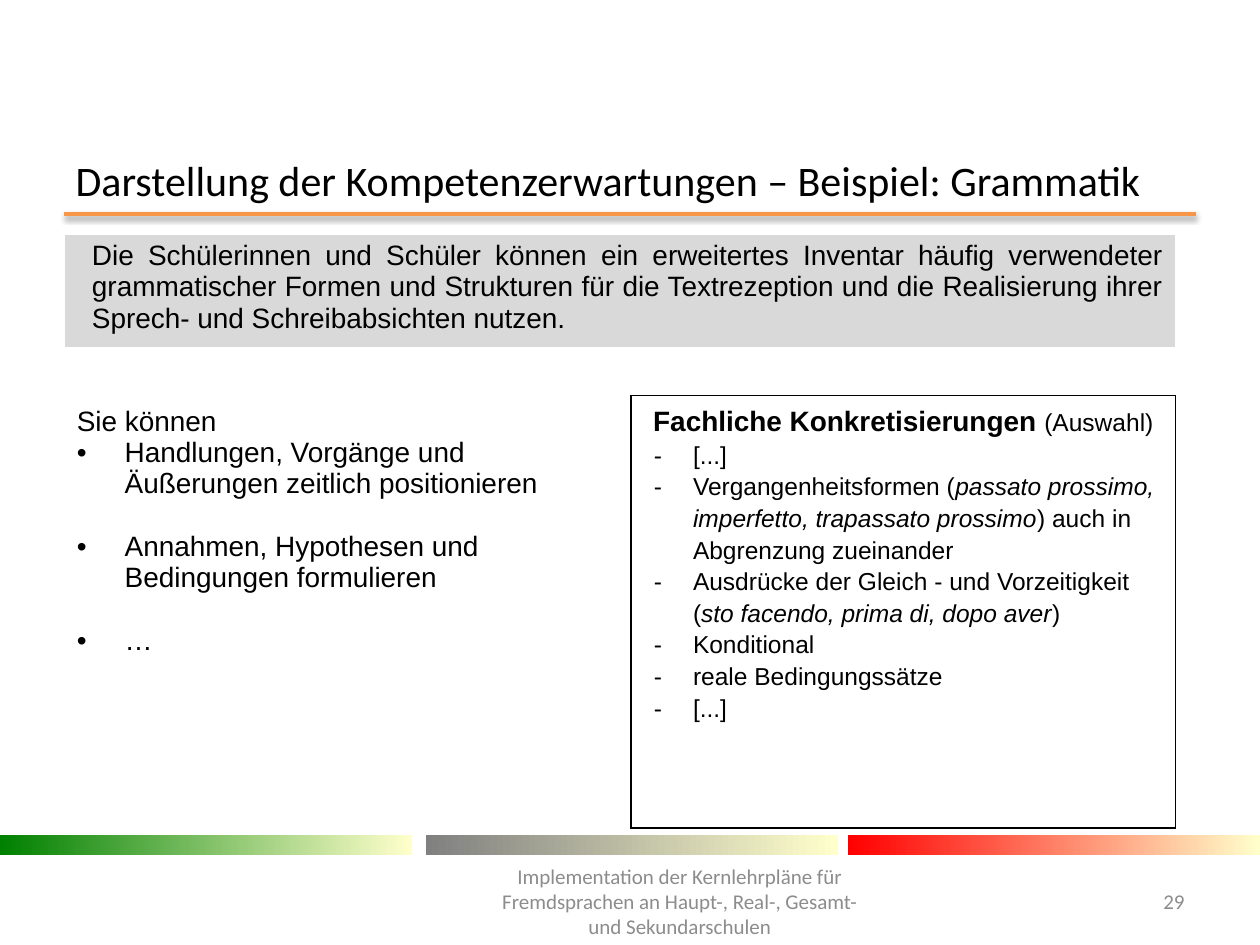
from lxml import etree
from pptx import Presentation
from pptx.dml.color import RGBColor
from pptx.enum.shapes import MSO_CONNECTOR, MSO_SHAPE
from pptx.enum.text import MSO_ANCHOR, PP_ALIGN
from pptx.oxml import parse_xml
from pptx.oxml.ns import nsdecls, qn
from pptx.util import Inches, Pt

LEFT, CENTER, RIGHT, JUSTIFY = PP_ALIGN.LEFT, PP_ALIGN.CENTER, PP_ALIGN.RIGHT, PP_ALIGN.JUSTIFY
MIDDLE = MSO_ANCHOR.MIDDLE
RECTANGLE = MSO_SHAPE.RECTANGLE
STRAIGHT = MSO_CONNECTOR.STRAIGHT

BLACK = RGBColor(0x00, 0x00, 0x00)
WHITE = RGBColor(0xFF, 0xFF, 0xFF)
SILVER = RGBColor(0xD9, 0xD9, 0xD9)
MUTED = RGBColor(0x8C, 0x8C, 0x8C)
ORANGE = RGBColor(0xF7, 0x96, 0x46)
CREAM = RGBColor(0xFF, 0xFF, 0xCC)
GREEN = RGBColor(0x00, 0x80, 0x00)
GRAY = RGBColor(0x80, 0x80, 0x80)
RED = RGBColor(0xFF, 0x00, 0x00)

deck = Presentation()
deck.slide_width, deck.slide_height = Inches(10), Inches(7.5)
page = deck.slides.add_slide(deck.slide_layouts[5])
COLUMN = deck.slide_width / 100
ROW = deck.slide_height / 75


def grid(left, top, width, height):
    return [round(left * COLUMN), round(top * ROW), round(width * COLUMN), round(height * ROW)]


def add_spans(para, spans, size, font="Arial", color=BLACK):
    for text, bold, italic in spans:
        span = para.add_run()
        span.text = text
        span.font.name, span.font.size = font, Pt(size)
        span.font.bold, span.font.italic = bold, italic
        span.font.color.rgb = color


rule = page.shapes.add_connector(STRAIGHT, *grid(5.1, 17, 94.9, 17))
rule.line.color.rgb = ORANGE
rule.line.width = Pt(2)
rule.element.spPr.append(parse_xml(
    f'<a:effectLst {nsdecls("a")}><a:outerShdw blurRad="{Pt(3.1)}" dist="{Pt(1.6)}" dir="5400000" '
    'rotWithShape="0"><a:srgbClr val="000000"><a:alpha val="38000"/></a:srgbClr>'
    '</a:outerShdw></a:effectLst>'))

for left, color in ((0, GREEN), (33.8, GRAY), (67.3, RED)):
    bar = page.shapes.add_shape(RECTANGLE, *grid(left, 66.3, 32.7, 1.6))
    bar.shadow.inherit = False
    bar.line.fill.background()
    bar.fill.gradient()
    bar.fill.gradient_angle = 0
    for stop, shade in zip(bar.fill.gradient_stops, (color, CREAM)):
        stop.color.rgb = shade

title = page.shapes.title
title.left, title.top, title.width, title.height = grid(5, 12.3, 90, 3.9)
footer = page.shapes.add_textbox(*grid(38.2, 69.5, 31.5, 4))
number = page.shapes.add_textbox(*grid(88.6, 69.5, 6.4, 4))
for box, text, size, color, align in (
    (title, "Darstellung der Kompetenzerwartungen – Beispiel: Grammatik", 24, BLACK, LEFT),
    (footer, "Implementation der Kernlehrpläne für Fremdsprachen an Haupt-, Real-, "
             "Gesamt- und Sekundarschulen", 12, MUTED, CENTER),
    (number, "29", 12, MUTED, RIGHT),
):
    box.text_frame.word_wrap = True
    box.text_frame.vertical_anchor = MIDDLE
    para = box.text_frame.paragraphs[0]
    para.alignment = align
    add_spans(para, [(text, False, False)], size, "Calibri", color)

table = page.shapes.add_table(3, 2, *grid(5.1, 18.6, 88.2, 46.5)).table
table.first_row = table.horz_banding = False
for column, width in zip(table.columns, (45, 43.2)):
    column.width = round(width * COLUMN)
for row, height in zip(table.rows, (8.4, 3.8, 34.3)):
    row.height = round(height * ROW)
for index in (0, 1):
    table.cell(index, 0).merge(table.cell(index, 1))

intro, spacer = table.cell(0, 0), table.cell(1, 0)
skills, details = table.cell(2, 0), table.cell(2, 1)
spacer.margin_top = spacer.margin_bottom = 0

for cell, sides in ((spacer, "B"), (skills, "R"), (details, "LRTB")):
    for side in sides:
        if cell is spacer:
            continue
        border = etree.SubElement(cell._tc.get_or_add_tcPr(), qn(f"a:ln{side}"), w=str(Pt(1)))
        paint = etree.SubElement(border, qn("a:solidFill"))
        etree.SubElement(paint, qn("a:srgbClr"), val=str(BLACK))
for cell, color in ((intro, SILVER), (spacer, WHITE), (skills, WHITE), (details, WHITE)):
    cell.fill.solid()
    cell.fill.fore_color.rgb = color

para = intro.text_frame.paragraphs[0]
para.alignment = JUSTIFY
para._p.get_or_add_pPr().set("marL", str(Inches(0.12)))
add_spans(para, [(
    "Die Schülerinnen und Schüler können ein erweitertes Inventar häufig verwendeter "
    "grammatischer Formen und Strukturen für die Textrezeption und die Realisierung ihrer "
    "Sprech- und Schreibabsichten nutzen.", False, False)], 16)

para = skills.text_frame.paragraphs[0]
para.line_spacing = 1.15
add_spans(para, [("Sie können", False, False)], 16)

para = details.text_frame.paragraphs[0]
para.alignment = CENTER
para.line_spacing = 1.15
add_spans(para, [("Fachliche Konkretisierungen ", True, False)], 16)
add_spans(para, [("(Auswahl)", False, False)], 14)

skill_items = [[(text, False, False)] for text in (
    "Handlungen, Vorgänge und Äußerungen zeitlich positionieren",
    "Annahmen, Hypothesen und Bedingungen formulieren",
    "…",
)]
detail_items = [
    [("[...]", False, False)],
    [("Vergangenheitsformen (", False, False),
     ("passato prossimo, imperfetto, trapassato prossimo", False, True),
     (") auch in Abgrenzung zueinander", False, False)],
    [("Ausdrücke der Gleich - und Vorzeitigkeit (", False, False),
     ("sto facendo, prima di, dopo aver", False, True),
     (")", False, False)],
    [("Konditional", False, False)],
    [("reale Bedingungssätze", False, False)],
    [("[...]", False, False)],
]
for cell, items, mark, margin, hanging, size, spacing, gap in (
    (skills, skill_items, "•", 0.38, 0.38, 16, 1, 18),
    (details, detail_items, "-", 0.39, 0.31, 14, 1.15, 0),
):
    for position, spans in enumerate(items):
        para = cell.text_frame.add_paragraph()
        properties = para._p.get_or_add_pPr()
        properties.set("marL", str(Inches(margin)))
        properties.set("indent", str(-Inches(hanging)))
        etree.SubElement(properties, qn("a:buFont"), typeface="Arial")
        etree.SubElement(properties, qn("a:buChar"), char=mark)
        para.line_spacing = spacing
        para.space_before = Pt(gap if position else 0)
        add_spans(para, spans, size)

deck.save("out.pptx")
